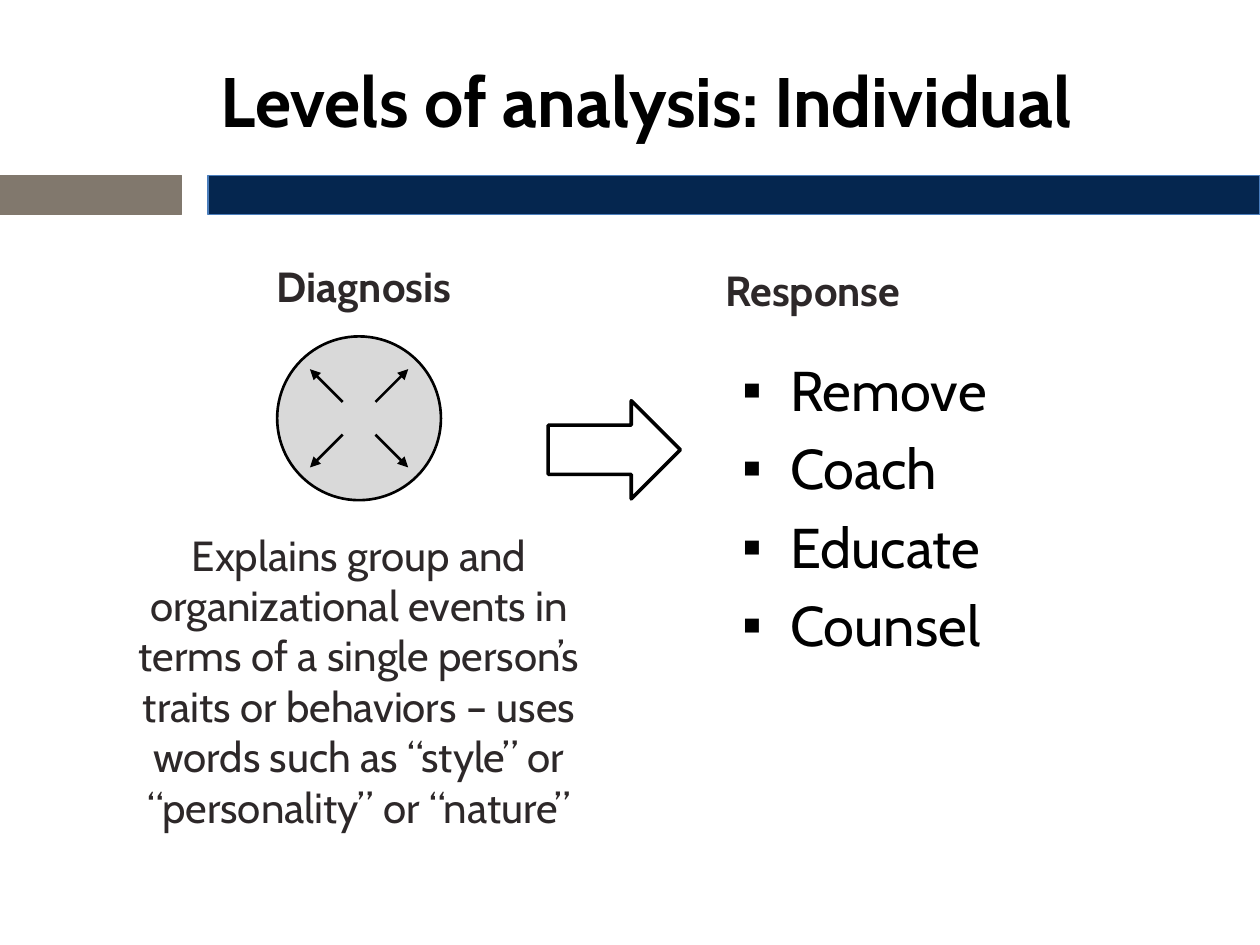
"""Build the slide on the individual level of analysis."""
from dataclasses import dataclass
from itertools import product

from lxml.etree import SubElement
from pptx import Presentation
from pptx.dml.color import RGBColor
from pptx.enum.shapes import MSO_CONNECTOR as Conn, MSO_SHAPE as Geo
from pptx.enum.text import MSO_ANCHOR as Anchor, MSO_AUTO_SIZE as Fit, PP_ALIGN as Align
from pptx.oxml.ns import qn
from pptx.util import Inches, Pt


@dataclass(frozen=True)
class Theme:
    """Hold the colours, font and type sizes of the slide."""
    font: str = "Cabin"
    black: str = "000000"
    white: str = "FFFFFF"
    ink: str = "2D2829"
    gray: str = "D9D9D9"
    taupe: str = "81786D"
    navy: str = "05264F"
    blue: str = "4B7EBC"
    head: int = 40
    list: int = 32
    text: int = 24


THEME = Theme()


def place(shape, box):
    """Move a shape to left, top, width and height in inches."""
    shape.left, shape.top, shape.width, shape.height = map(Inches, box)


def write(shape, text, size=THEME.text, color=THEME.ink, bold=False,
          align=Align.CENTER, anchor=Anchor.TOP, gap=0):
    """Fill a shape with one paragraph per line of text."""
    frame = shape.text_frame
    frame.text = text
    frame.word_wrap = True
    frame.auto_size = Fit.NONE
    frame.vertical_anchor = anchor
    for para in frame.paragraphs:
        para.alignment = align
        para.space_before = Pt(gap)
        font = para.runs[0].font
        font.name, font.size, font.bold = THEME.font, Pt(size), bold
        font.color.rgb = RGBColor.from_string(color)


def label(slide, text, box, **style):
    """Add a text box."""
    shape = slide.shapes.add_textbox(*map(Inches, box))
    write(shape, text, **style)


def bullet(shape, mark, indent):
    """Give each paragraph a square mark and a hanging indent."""
    for para in shape.text_frame.paragraphs:
        props = para._p.get_or_add_pPr()
        props.set("marL", str(Inches(indent)))
        props.set("indent", str(-Inches(indent)))
        SubElement(props, qn("a:buChar"), char=mark)


def solid(shapes, kind, box, fill, line, width):
    """Add a filled and outlined preset shape."""
    shape = shapes.add_shape(kind, *map(Inches, box))
    shape.shadow.inherit = False
    shape.fill.solid()
    shape.fill.fore_color.rgb = RGBColor.from_string(fill)
    shape.line.color.rgb = RGBColor.from_string(line)
    shape.line.width = Pt(width)


def arrow(shapes, start, end):
    """Add a thin black arrow."""
    line = shapes.add_connector(Conn.STRAIGHT, *map(Inches, (*start, *end)))
    line.line.color.rgb = RGBColor.from_string(THEME.black)
    line.line.width = Pt(1.5)
    SubElement(line.line._get_or_add_ln(), qn("a:tailEnd"), type="triangle")
    SubElement(line._element.spPr, qn("a:effectLst"))


def burst(slide, x, y):
    """Draw a circle with four arrows that point out from its centre."""
    shapes = slide.shapes.add_group_shape().shapes
    solid(shapes, Geo.OVAL, (x - 0.65, y - 0.65, 1.3, 1.3),
          THEME.gray, THEME.black, 1.5)
    for dx, dy in product((-1, 1), repeat=2):
        near, far = ((x + dx * r, y + dy * r) for r in (0.13, 0.39))
        arrow(shapes, near, far)


def main():
    """Build and save the slide."""
    deck = Presentation()
    deck.slide_width, deck.slide_height = Inches(10), Inches(7.5)
    slide = deck.slides.add_slide(deck.slide_layouts[1])
    shapes = slide.shapes
    title, body = slide.placeholders

    solid(shapes, Geo.RECTANGLE, (0, 1.39, 1.44, 0.31), THEME.taupe, THEME.taupe, 0.75)
    solid(shapes, Geo.RECTANGLE, (1.65, 1.39, 8.35, 0.31), THEME.navy, THEME.blue, 0.75)

    place(title, (0.67, 0.25, 8.92, 1.08))
    write(title, "Levels of analysis: Individual", size=THEME.head,
          color=THEME.black, bold=True, anchor=Anchor.MIDDLE)
    place(body, (5.79, 2.77, 2.68, 2.62))
    write(body, "Remove\nCoach\nEducate\nCounsel", size=THEME.list,
          color=THEME.black, align=Align.LEFT, gap=THEME.list * 0.2)
    bullet(body, "▪", 0.38)

    burst(slide, 2.85, 3.32)
    solid(shapes, Geo.RIGHT_ARROW, (4.35, 3.18, 1.05, 0.78),
          THEME.white, THEME.black, 2)
    label(slide, "Explains group and organizational events in terms of a single "
          "person’s traits or behaviors – uses words such as “style” or "
          "“personality” or “nature”", (0.85, 4.15, 4, 2.52))
    label(slide, "Response", (4.85, 2.05, 3.2, 0.5), bold=True)
    label(slide, "Diagnosis", (1.29, 2.02, 3.2, 0.5), bold=True)
    deck.save("out.pptx")


if __name__ == "__main__":
    main()
